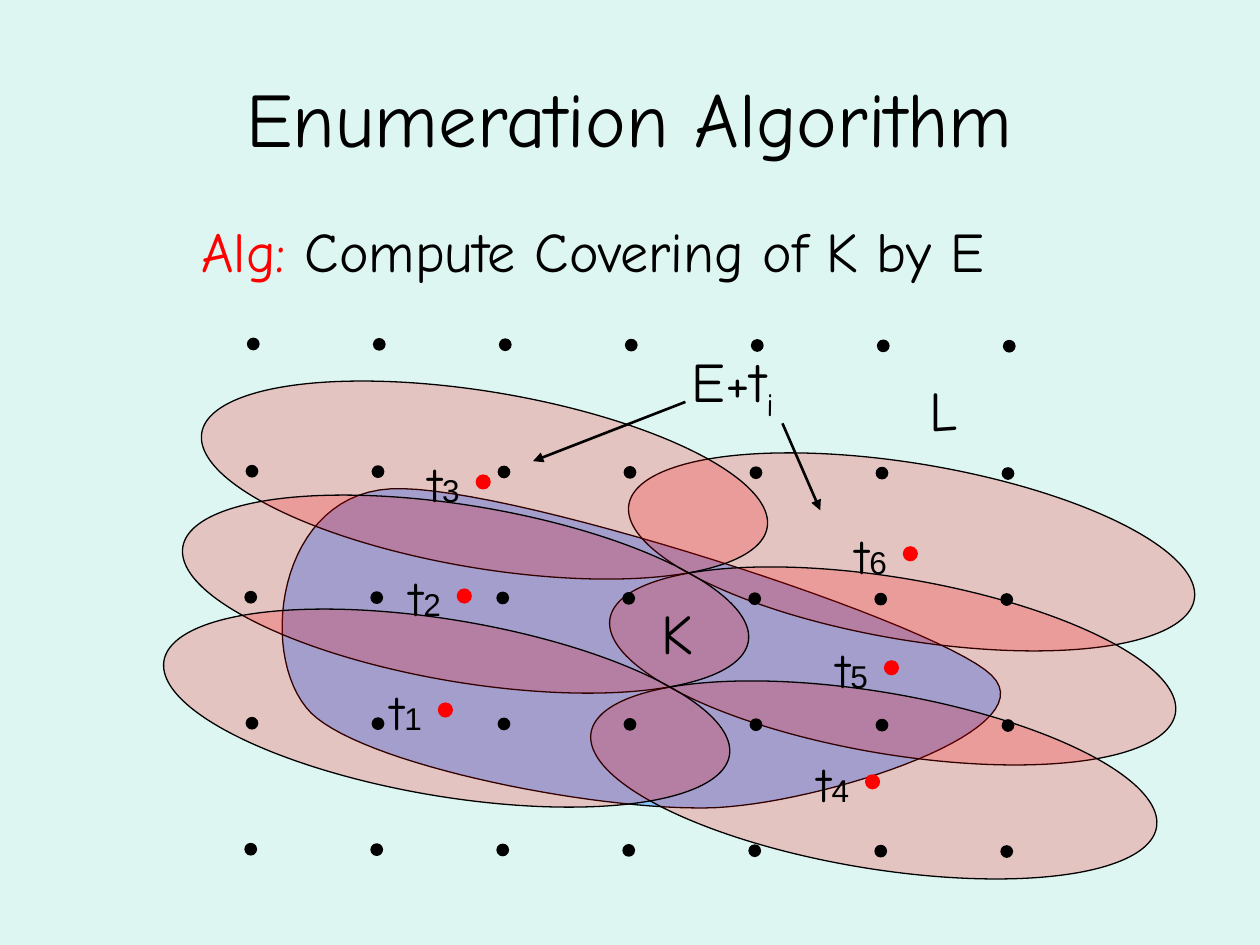
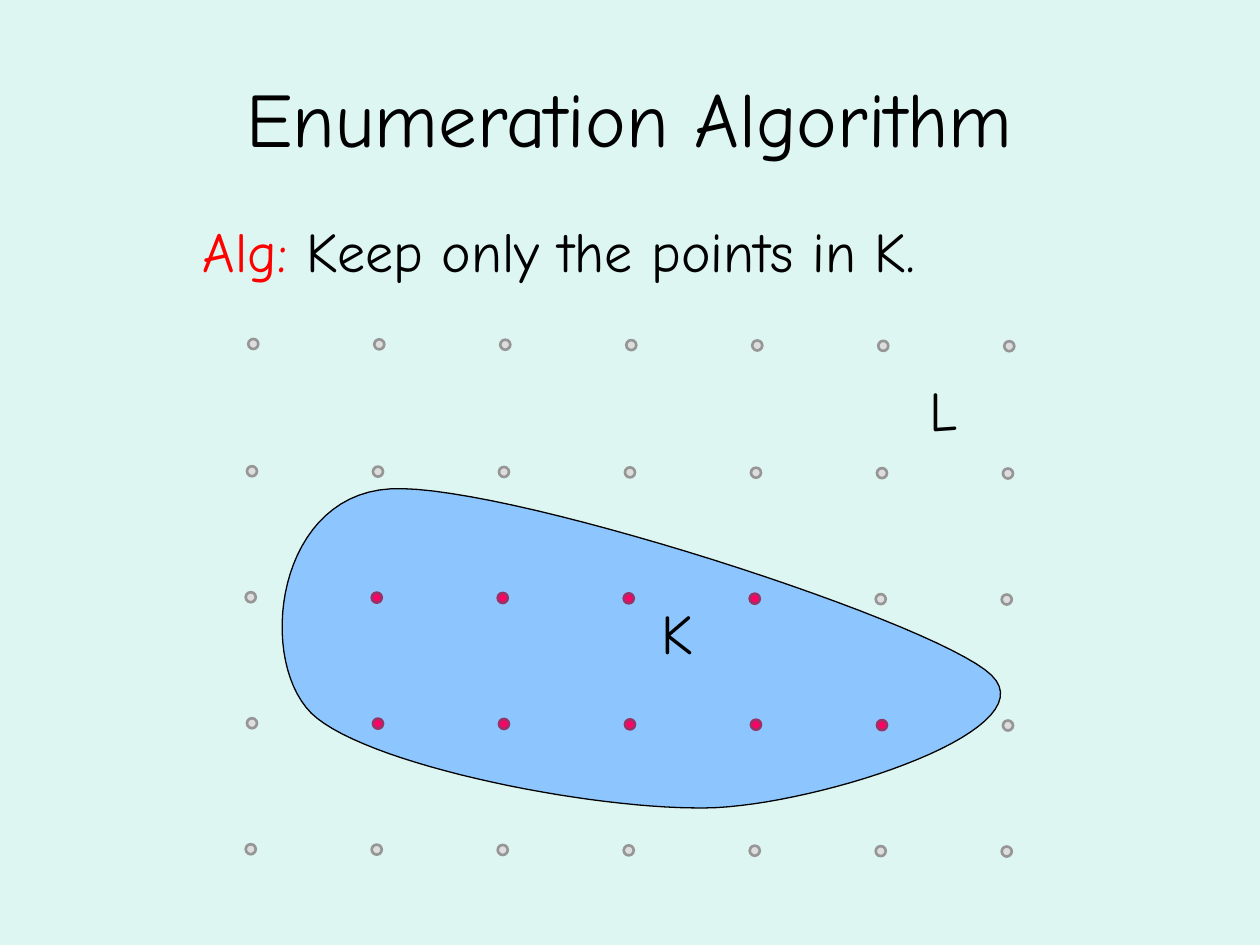
from lxml import etree
from pptx import Presentation
from pptx import util as u
from pptx.dml.color import RGBColor
from pptx.enum import shapes, text
from pptx.oxml.ns import qn

COLORS = {
    "background": "DEF6F1", "ink": "000000", "accent": "FF0000", "body": "8DC6FF",
    "dropped": "DDDDDD", "dropped_edge": "969696",
    "kept": "FF0066", "kept_edge": "993366",
}
FONT, INDEX_FONT = "Comic Neue", "Arial"
TITLE = "Enumeration Algorithm"
COVERING_STEP = " Compute Covering of K by E"
KEEPING_STEP = " Keep only the points in K."

BODY_START = (3.1, 3.88)
BODY_CURVES = [
    [(2.19, 3.93), (2.04, 5.23), (2.47, 5.66)],
    [(2.9, 6.08), (4.79, 6.45), (5.69, 6.41)],
    [(6.59, 6.36), (8.31, 5.79), (7.87, 5.36)],
    [(7.44, 4.94), (4, 3.83), (3.1, 3.88)],
]
CURVE_STEPS = 30

LATTICE_ROWS = [(1.97, 2.69), (1.96, 3.7), (1.95, 4.7), (1.96, 5.7), (1.95, 6.7)]
LATTICE_COLUMNS = 7
COLUMN_DROP = 0.003
POINT_SIZE = 0.08
KEPT_COLUMNS = {2: range(1, 5), 3: range(1, 6)}

COVER_STACKS = [((4.96, 3.68), "654"), ((1.57, 3.11), "321")]
COVER_STEP = (-0.15, 0.905)
COVER_SIZE = (4.55, 1.4)
COVER_TILT = 9.5
CENTER_SIZE = 0.11
CENTER_OFFSET = (2.21, 0.66)
INDEX_OFFSET = (1.73, 0.44)
COVER_ARROWS = [((5.44, 3.19), (4.23, 3.66)), ((6.21, 3.36), (6.51, 4.05))]


def rgb(name):
    return RGBColor.from_string(COLORS[name])


def paint(shape, fill, edge, width, opacity=None):
    shape.shadow.inherit = False
    shape.fill.solid()
    shape.fill.fore_color.rgb = rgb(fill)
    shape.line.color.rgb = rgb(edge)
    shape.line.width = u.Pt(width)
    if opacity:
        color = shape._element.spPr.find(qn("a:solidFill"))[0]
        etree.SubElement(color, qn("a:alpha")).set("val", str(opacity * 1000))


def add_ellipse(slide, at, size, fill, edge, width, tilt=0, opacity=None):
    ellipse = slide.shapes.add_shape(
        shapes.MSO_SHAPE.OVAL, *map(u.Inches, (*at, *size)))
    ellipse.rotation = tilt
    paint(ellipse, fill, edge, width, opacity)


def add_text(slide, box, pieces, wrap=False, grow=True):
    frame = slide.shapes.add_textbox(*map(u.Inches, box)).text_frame
    frame.word_wrap = wrap
    frame.auto_size = (text.MSO_AUTO_SIZE.SHAPE_TO_FIT_TEXT if grow
                       else text.MSO_AUTO_SIZE.NONE)
    for words, size, color, font in pieces:
        run = frame.paragraphs[0].add_run()
        run.text = words
        run.font.size = u.Pt(size)
        run.font.name = font
        run.font.color.rgb = rgb(color)
    return frame


def body_outline():
    start = BODY_START
    for first, second, end in BODY_CURVES:
        for step in range(1, CURVE_STEPS + 1):
            t = step / CURVE_STEPS
            weights = ((1 - t) ** 3, 3 * t * (1 - t) ** 2, 3 * t * t * (1 - t), t ** 3)
            yield tuple(
                u.Inches(sum(w * p[axis] for w, p in
                             zip(weights, (start, first, second, end))))
                for axis in (0, 1))
        start = end


def add_body(slide):
    builder = slide.shapes.build_freeform(*map(u.Inches, BODY_START))
    builder.add_line_segments(list(body_outline()), close=True)
    paint(builder.convert_to_shape(), "body", "ink", 0.75)


def add_base(deck, step, step_box):
    slide = deck.slides.add_slide(deck.slide_layouts[6])
    slide.background.fill.solid()
    slide.background.fill.fore_color.rgb = rgb("background")
    add_body(slide)
    title = add_text(slide, (0.5, 0.3, 9, 1.25), [(TITLE, 44, "ink", FONT)],
                     wrap=True, grow=False)
    title.vertical_anchor = text.MSO_ANCHOR.MIDDLE
    title.paragraphs[0].alignment = text.PP_ALIGN.CENTER
    add_text(slide, step_box,
             [("Alg:", 32, "accent", FONT), (step, 32, "ink", FONT)],
             wrap=True, grow=False)
    return slide


def add_lattice(slide, point_colors):
    for row, (left, top) in enumerate(LATTICE_ROWS):
        for column in range(LATTICE_COLUMNS):
            add_ellipse(slide, (left + column, top + column * COLUMN_DROP),
                        (POINT_SIZE, POINT_SIZE), *point_colors(row, column), 1.5)


def add_set_names(slide):
    add_text(slide, (5.15, 4.7, 0.47, 0.63), [("K", 32, "ink", FONT)])
    add_text(slide, (7.28, 2.93, 0.47, 0.63), [("L", 32, "ink", FONT)], wrap=True)


def add_covering(slide):
    for (left, top), indices in COVER_STACKS:
        for place, index in enumerate(indices):
            x, y = left + place * COVER_STEP[0], top + place * COVER_STEP[1]
            add_ellipse(slide, (x, y), COVER_SIZE, "accent", "ink", 0.75,
                        COVER_TILT, opacity=20)
            add_ellipse(slide, (x + CENTER_OFFSET[0], y + CENTER_OFFSET[1]),
                        (CENTER_SIZE, CENTER_SIZE), "accent", "accent", 0.75)
            add_text(slide, (x + INDEX_OFFSET[0], y + INDEX_OFFSET[1], 0.52, 0.57),
                     [("t", 28, "ink", FONT), (index, 18, "ink", INDEX_FONT)])

    name = add_text(slide, (5.39, 2.7, 0.98, 0.63),
                    [("E+t", 32, "ink", FONT), ("i", 32, "ink", FONT)])
    name.paragraphs[0].runs[1].font._element.set("baseline", "-25000")

    for start, end in COVER_ARROWS:
        arrow = slide.shapes.add_connector(
            shapes.MSO_CONNECTOR.STRAIGHT, *map(u.Inches, (*start, *end)))
        arrow.line.color.rgb = rgb("ink")
        arrow.line.width = u.Pt(1.5)
        properties = arrow._element.spPr
        line = properties.find(qn("a:ln"))
        etree.SubElement(line, qn("a:tailEnd")).set("type", "triangle")
        etree.SubElement(properties, qn("a:effectLst"))


def all_points(row, column):
    return "ink", "ink"


def points_in_body(row, column):
    if column in KEPT_COLUMNS.get(row, ()):
        return "kept", "kept_edge"
    return "dropped", "dropped_edge"


def main():
    deck = Presentation()
    deck.slide_width, deck.slide_height = u.Inches(10), u.Inches(7.5)

    covering = add_base(deck, COVERING_STEP, (1.5, 1.67, 7.83, 0.84))
    add_covering(covering)
    add_lattice(covering, all_points)
    add_set_names(covering)

    keeping = add_base(deck, KEEPING_STEP, (1.51, 1.67, 6.74, 0.73))
    add_lattice(keeping, points_in_body)
    add_set_names(keeping)

    deck.save("out.pptx")


if __name__ == "__main__":
    main()
